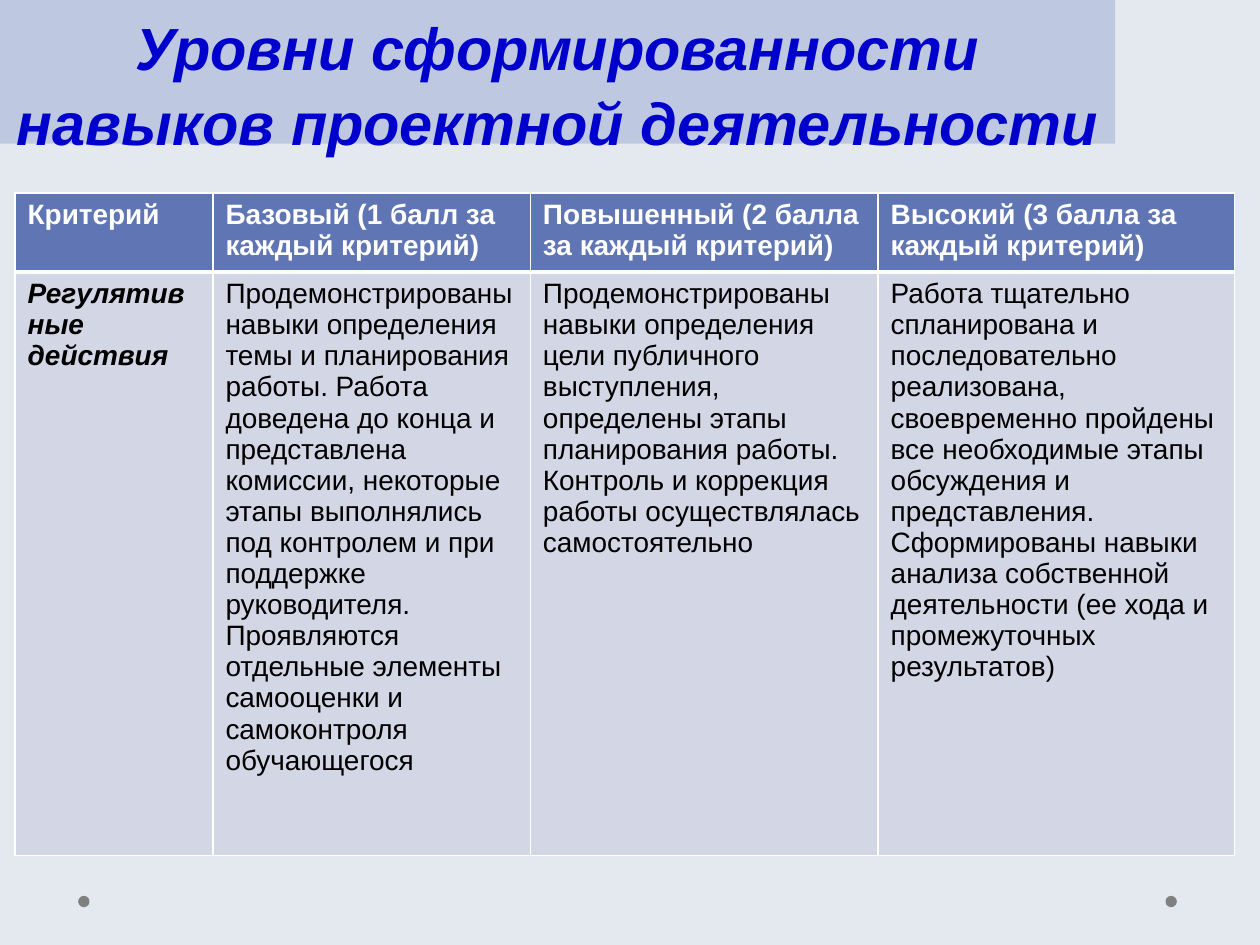
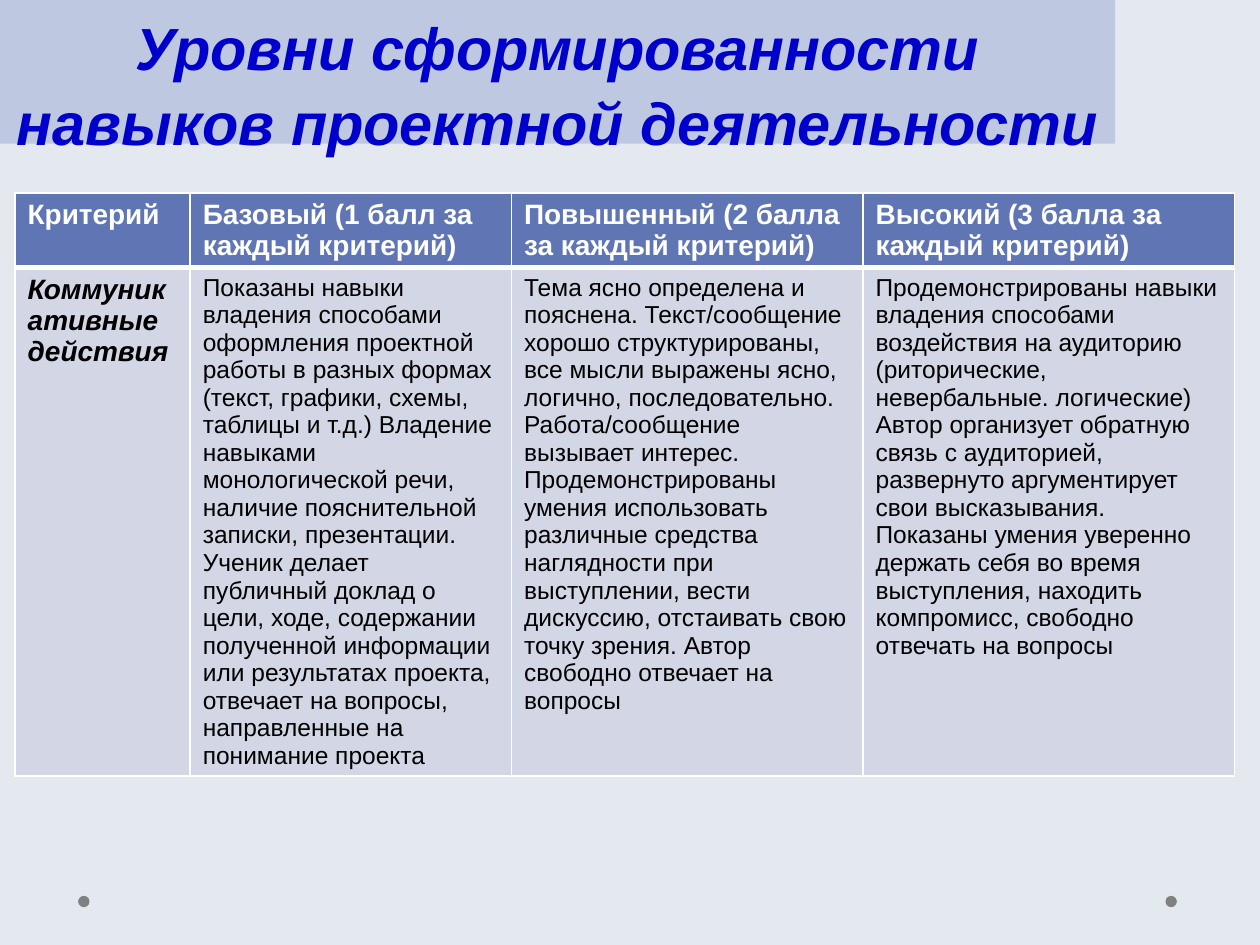
from dataclasses import dataclass

from lxml.etree import SubElement
from pptx import Presentation
from pptx.dml.color import RGBColor
from pptx.enum.shapes import MSO_SHAPE as Shape
from pptx.enum.text import MSO_ANCHOR as Anchor, PP_ALIGN as Align
from pptx.oxml.ns import qn
from pptx.util import Inches, Pt


@dataclass(frozen=True)
class Theme:
    font: str = "Arial"
    background: str = "E4E9EF"
    band: str = "BFC8E1"
    title: str = "0000CC"
    dot: str = "808080"
    header: str = "6076B4"
    body: str = "D2D6E5"
    light: str = "FFFFFF"
    dark: str = "000000"
    title_size: int = 34
    label_size: int = 16
    thin: int = 1
    thick: int = 3


THEME = Theme()

TITLE = "Уровни сформированности навыков проектной деятельности"
HEADINGS = [
    "Критерий",
    "Базовый (1 балл за каждый критерий)",
    "Повышенный (2 балла за каждый критерий)",
    "Высокий (3 балла за каждый критерий)",
]
# Each level is a list of paragraphs.
SLIDES = [
    {
        "criterion": "Регулятивные действия",
        "levels": [
            ["Продемонстрированы навыки определения темы и планирования работы. "
             "Работа доведена до конца и представлена комиссии, некоторые этапы "
             "выполнялись под контролем и при поддержке руководителя. Проявляются "
             "отдельные элементы самооценки и самоконтроля обучающегося"],
            ["Продемонстрированы навыки определения цели публичного выступления, "
             "определены этапы планирования работы. Контроль и коррекция работы "
             "осуществлялась самостоятельно"],
            ["Работа тщательно спланирована и последовательно реализована, "
             "своевременно пройдены все необходимые этапы обсуждения и "
             "представления. Сформированы навыки анализа собственной деятельности "
             "(ее хода и промежуточных результатов)"],
        ],
        "size": 16,
        "columns": [1.57, 2.52, 2.76, 2.83],
        "rows": [0.63, 4.63],
    },
    {
        "criterion": "Коммуникативные действия",
        "levels": [
            ["Показаны навыки владения способами оформления проектной работы в "
             "разных формах (текст, графики, схемы, таблицы и т.д.) Владение "
             "навыками монологической речи, наличие пояснительной записки, "
             "презентации.",
             "Ученик делает публичный доклад о цели, ходе, содержании полученной "
             "информации или результатах проекта, отвечает на вопросы, "
             "направленные на понимание проекта"],
            ["Тема ясно определена и пояснена. Текст/сообщение хорошо "
             "структурированы, все мысли выражены ясно, логично, последовательно. "
             "Работа/сообщение вызывает интерес. Продемонстрированы умения "
             "использовать различные средства наглядности при выступлении, вести "
             "дискуссию, отстаивать свою точку зрения. Автор свободно отвечает на "
             "вопросы"],
            ["Продемонстрированы навыки владения способами воздействия на "
             "аудиторию (риторические, невербальные. логические)",
             "Автор организует обратную связь с аудиторией, развернуто "
             "аргументирует свои высказывания. Показаны умения уверенно держать "
             "себя во время выступления, находить компромисс, свободно отвечать "
             "на вопросы"],
        ],
        "size": 14,
        "columns": [1.39, 2.55, 2.79, 2.95],
        "rows": [0.59, 4.03],
    },
]

DOT_LEFTS = [0.62, 9.25]
DOT_TOP, DOT_SIZE = 7.11, 0.09
TABLE_LEFT, TABLE_TOP = 0.12, 1.53


def paint(target, color):
    target.fill.solid()
    target.fill.fore_color.rgb = RGBColor.from_string(color)


def add_plain_shape(page, kind, left, top, width, height, color):
    shape = page.shapes.add_shape(
        kind, Inches(left), Inches(top), Inches(width), Inches(height))
    shape.shadow.inherit = False
    paint(shape, color)
    shape.line.fill.background()
    return shape


def write(frame, paragraphs, size, color, bold=False, italic=False, align=Align.LEFT):
    frame.word_wrap = True
    for index, text in enumerate(paragraphs):
        para = frame.paragraphs[0] if index == 0 else frame.add_paragraph()
        para.alignment = align
        span = para.add_run()
        span.text = text
        font = span.font
        font.name, font.size = THEME.font, Pt(size)
        font.bold, font.italic = bold, italic
        font.color.rgb = RGBColor.from_string(color)


def set_borders(cell, top, bottom):
    """Draw light cell borders; must run before the cell is filled."""
    properties = cell._tc.get_or_add_tcPr()
    widths = {"lnL": THEME.thin, "lnR": THEME.thin, "lnT": top, "lnB": bottom}
    for tag, width in widths.items():
        line = SubElement(properties, qn(f"a:{tag}"), w=str(Pt(width)))
        fill = SubElement(line, qn("a:solidFill"))
        SubElement(fill, qn("a:srgbClr"), val=THEME.light)


def add_title(page):
    band = add_plain_shape(page, Shape.RECTANGLE, 0, 0, 8.85, 1.14, THEME.band)
    frame = band.text_frame
    frame.vertical_anchor = Anchor.TOP
    frame.margin_top = Inches(0.06)
    write(frame, [TITLE], THEME.title_size, THEME.title, True, True, Align.CENTER)
    frame.paragraphs[0].line_spacing = 1.05


def add_levels_table(page, content):
    columns, rows = content["columns"], content["rows"]
    table = page.shapes.add_table(
        len(rows), len(columns), Inches(TABLE_LEFT), Inches(TABLE_TOP),
        Inches(sum(columns)), Inches(sum(rows))).table
    for row, height in zip(table.rows, rows):
        row.height = Inches(height)

    texts = [[content["criterion"]], *content["levels"]]
    for index, (width, heading, text) in enumerate(zip(columns, HEADINGS, texts)):
        table.columns[index].width = Inches(width)
        head, body = table.cell(0, index), table.cell(1, index)

        set_borders(head, THEME.thin, THEME.thick)
        paint(head, THEME.header)
        write(head.text_frame, [heading], THEME.label_size, THEME.light, bold=True)

        is_label = index == 0
        size = THEME.label_size if is_label else content["size"]
        set_borders(body, THEME.thick, THEME.thin)
        paint(body, THEME.body)
        write(body.text_frame, text, size, THEME.dark, is_label, is_label)


def build_slide(deck, content):
    page = deck.slides.add_slide(deck.slide_layouts[6])
    paint(page.background, THEME.background)
    for left in DOT_LEFTS:
        add_plain_shape(page, Shape.OVAL, left, DOT_TOP, DOT_SIZE, DOT_SIZE, THEME.dot)
    add_title(page)
    add_levels_table(page, content)


def main():
    deck = Presentation()
    deck.slide_width, deck.slide_height = Inches(10), Inches(7.5)
    for content in SLIDES:
        build_slide(deck, content)
    deck.save("out.pptx")


if __name__ == "__main__":
    main()
